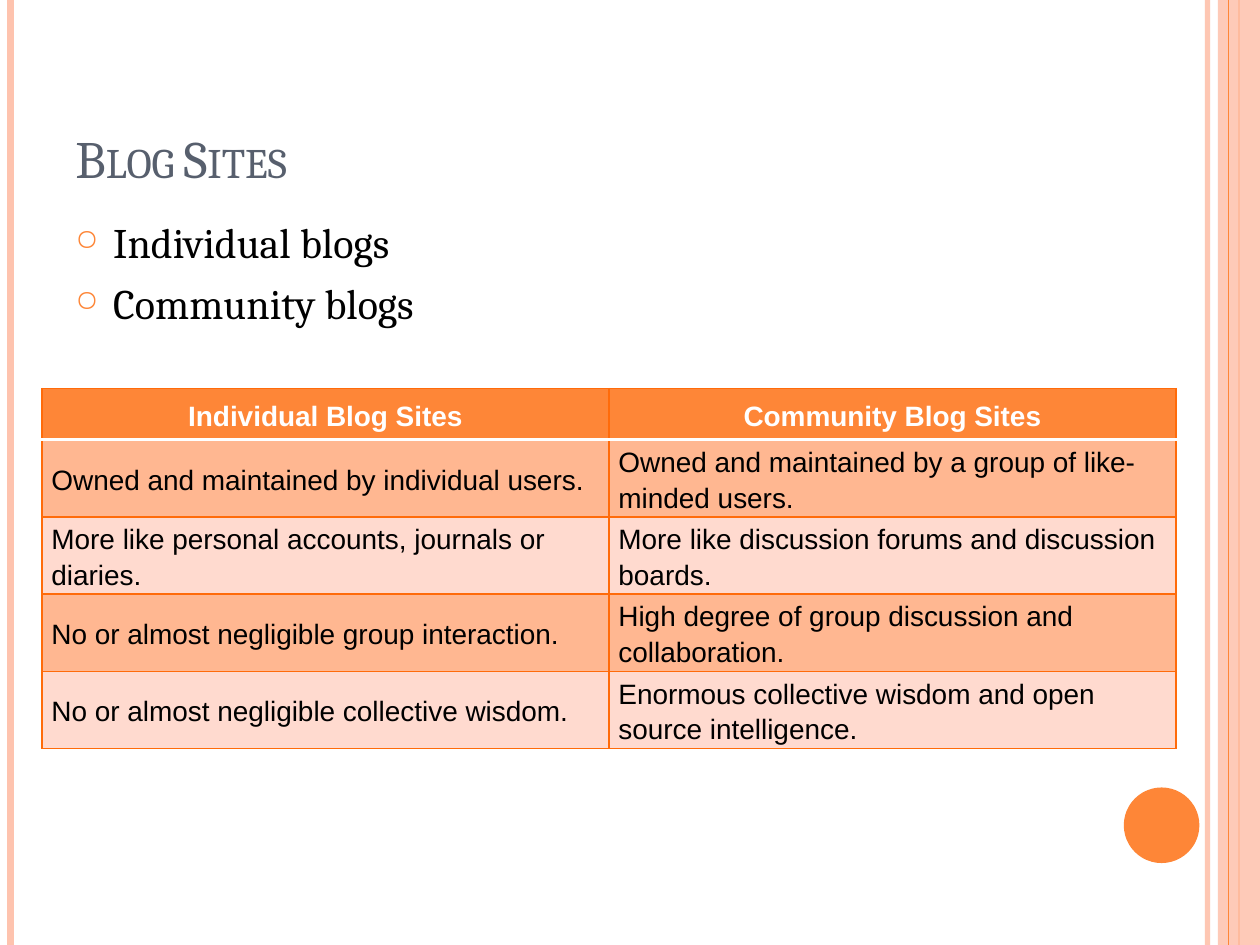
from dataclasses import dataclass

from lxml.etree import SubElement
from pptx import Presentation
from pptx.dml.color import RGBColor
from pptx.enum.shapes import MSO_CONNECTOR as Connector, MSO_SHAPE as Shape
from pptx.enum.text import MSO_ANCHOR as Anchor, PP_ALIGN as Align
from pptx.oxml.ns import qn
from pptx.util import Pt

COLORS = {
    "orange": "FE8637",
    "pink": "FEC3AE",
    "border": "FF6B0A",
    "dark band": "FFB791",
    "light band": "FFDACF",
    "title": "575F6D",
    "black": "000000",
    "white": "FFFFFF",
}
PAGE_WIDTH, PAGE_HEIGHT = 720, 540


@dataclass
class Stripe:
    x: float
    color: str
    width: float
    opacity: int = 100


@dataclass
class Block:
    shape: Shape
    left: float
    top: float
    width: float
    height: float
    color: str
    opacity: int = 100


@dataclass
class TextStyle:
    font: str
    size: float
    color: str
    bold: bool = False


# Stripes and blocks from back to front
DECORATION = [
    Stripe(690, "pink", 3, 93),
    Stripe(6, "pink", 4.5),
    Stripe(708, "orange", 1.5),
    Block(Shape.RECTANGLE, 696, 0, 24, PAGE_HEIGHT, "pink", 87),
    Stripe(702, "orange", 0.75),
    Block(Shape.OVAL, 642.2, 450, 43.2, 43.2, "orange"),
]
TITLE = TextStyle("Cambria", 30, "title")
BODY = TextStyle("Cambria", 24, "black")
HEADER = TextStyle("Arial", 16, "white", True)
CELL = TextStyle("Arial", 16, "black")

BULLETS = ["Individual blogs", "Community blogs"]
ROWS = [
    ("Individual Blog Sites", "Community Blog Sites"),
    ("Owned and maintained by individual users.",
     "Owned and maintained by a group of like-minded users."),
    ("More like personal accounts, journals or diaries.",
     "More like discussion forums and discussion boards."),
    ("No or almost negligible group interaction.",
     "High degree of group discussion and collaboration."),
    ("No or almost negligible collective wisdom.",
     "Enormous collective wisdom and open source intelligence."),
]


def rgb(name: str) -> RGBColor:
    return RGBColor.from_string(COLORS[name])


def set_solid(fill, color: str) -> None:
    fill.solid()
    fill.fore_color.rgb = rgb(color)


def set_opacity(element, percent: int) -> None:
    if percent < 100:
        color = next(element.iter(qn("a:srgbClr")))
        SubElement(color, qn("a:alpha"), val=str(percent * 1000))


def set_font(para, style: TextStyle) -> None:
    para.font.name = style.font
    para.font.size = Pt(style.size)
    para.font.bold = style.bold
    para.font.color.rgb = rgb(style.color)


def draw_stripe(slide, stripe: Stripe) -> None:
    line = slide.shapes.add_connector(
        Connector.STRAIGHT, Pt(stripe.x), Pt(0), Pt(stripe.x), Pt(PAGE_HEIGHT))
    line.line.color.rgb = rgb(stripe.color)
    line.line.width = Pt(stripe.width)
    properties = line.element.spPr
    set_opacity(properties, stripe.opacity)
    SubElement(properties, qn("a:effectLst"))


def draw_block(slide, block: Block) -> None:
    shape = slide.shapes.add_shape(
        block.shape, Pt(block.left), Pt(block.top), Pt(block.width), Pt(block.height))
    shape.shadow.inherit = False
    set_solid(shape.fill, block.color)
    shape.line.fill.background()
    set_opacity(shape.element.spPr, block.opacity)


def add_text_box(slide, left: float, top: float, width: float, height: float):
    frame = slide.shapes.add_textbox(Pt(left), Pt(top), Pt(width), Pt(height)).text_frame
    frame.word_wrap = True
    return frame


def draw_title(slide) -> None:
    frame = add_text_box(slide, 36, 21.6, 588, 90)
    frame.vertical_anchor = Anchor.BOTTOM
    para = frame.paragraphs[0]
    span = para.add_run()
    span.text = "Blog Sites"
    set_font(para, TITLE)
    span.font._element.set("cap", "small")


def draw_bullets(slide) -> None:
    frame = add_text_box(slide, 36, 120, 648, 84)
    frame.text = "\n".join(BULLETS)
    for para in frame.paragraphs:
        set_font(para, BODY)
        para.space_before = Pt(6)
        properties = para._p.get_or_add_pPr()
        properties.set("marL", str(Pt(21.6)))
        properties.set("indent", str(Pt(-21.6)))
        # Bullet elements precede the default run properties
        default_run = properties.find(qn("a:defRPr"))
        bullet_color = SubElement(properties, qn("a:buClr"))
        SubElement(bullet_color, qn("a:srgbClr"), val=COLORS["orange"])
        SubElement(properties, qn("a:buSzPct"), val="70000")
        SubElement(properties, qn("a:buChar"), char="○")
        if default_run is not None:
            properties.append(default_run)


def set_borders(cell, sides: dict[str, tuple[str, float]]) -> None:
    properties = cell._tc.get_or_add_tcPr()
    for index, (side, (color, width)) in enumerate(sides.items()):
        line = SubElement(properties, qn(f"a:ln{side}"), w=str(Pt(width)))
        fill = SubElement(line, qn("a:solidFill"))
        SubElement(fill, qn("a:srgbClr"), val=COLORS[color])
        properties.insert(index, line)


def draw_table(slide) -> None:
    heights = [29.2] + [40.9] * (len(ROWS) - 1)
    table = slide.shapes.add_table(
        len(ROWS), 2, Pt(24), Pt(222), Pt(648), Pt(sum(heights))).table
    for row, texts in enumerate(ROWS):
        table.rows[row].height = Pt(heights[row])
        is_header = row == 0
        band = "orange" if is_header else "dark band" if row % 2 else "light band"
        plain, divider = ("border", 1), ("white", 2)
        sides = {"L": plain, "R": plain,
                 "T": divider if row == 1 else plain,
                 "B": divider if is_header else plain}
        for column, text in enumerate(texts):
            cell = table.cell(row, column)
            cell.text = text
            cell.vertical_anchor = Anchor.MIDDLE
            cell.margin_left = cell.margin_right = Pt(5.4)
            cell.margin_top = cell.margin_bottom = Pt(0)
            para = cell.text_frame.paragraphs[0]
            para.line_spacing = 1.15
            para.alignment = Align.CENTER if is_header else Align.LEFT
            set_font(para, HEADER if is_header else CELL)
            set_solid(cell.fill, band)
            set_borders(cell, sides)


def main() -> None:
    deck = Presentation()
    deck.slide_width, deck.slide_height = Pt(PAGE_WIDTH), Pt(PAGE_HEIGHT)
    slide = deck.slides.add_slide(deck.slide_layouts[6])
    for part in DECORATION:
        if isinstance(part, Stripe):
            draw_stripe(slide, part)
        else:
            draw_block(slide, part)
    draw_title(slide)
    draw_bullets(slide)
    draw_table(slide)
    deck.save("out.pptx")


if __name__ == "__main__":
    main()
